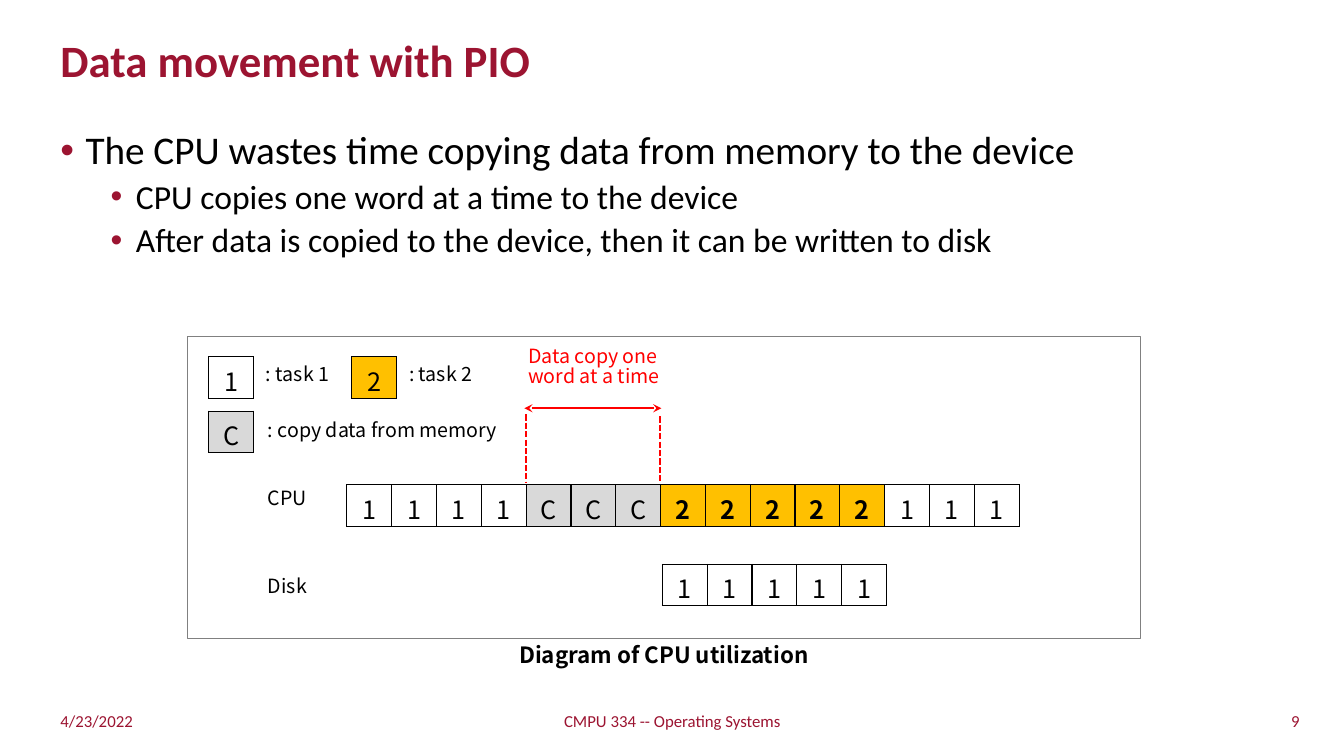
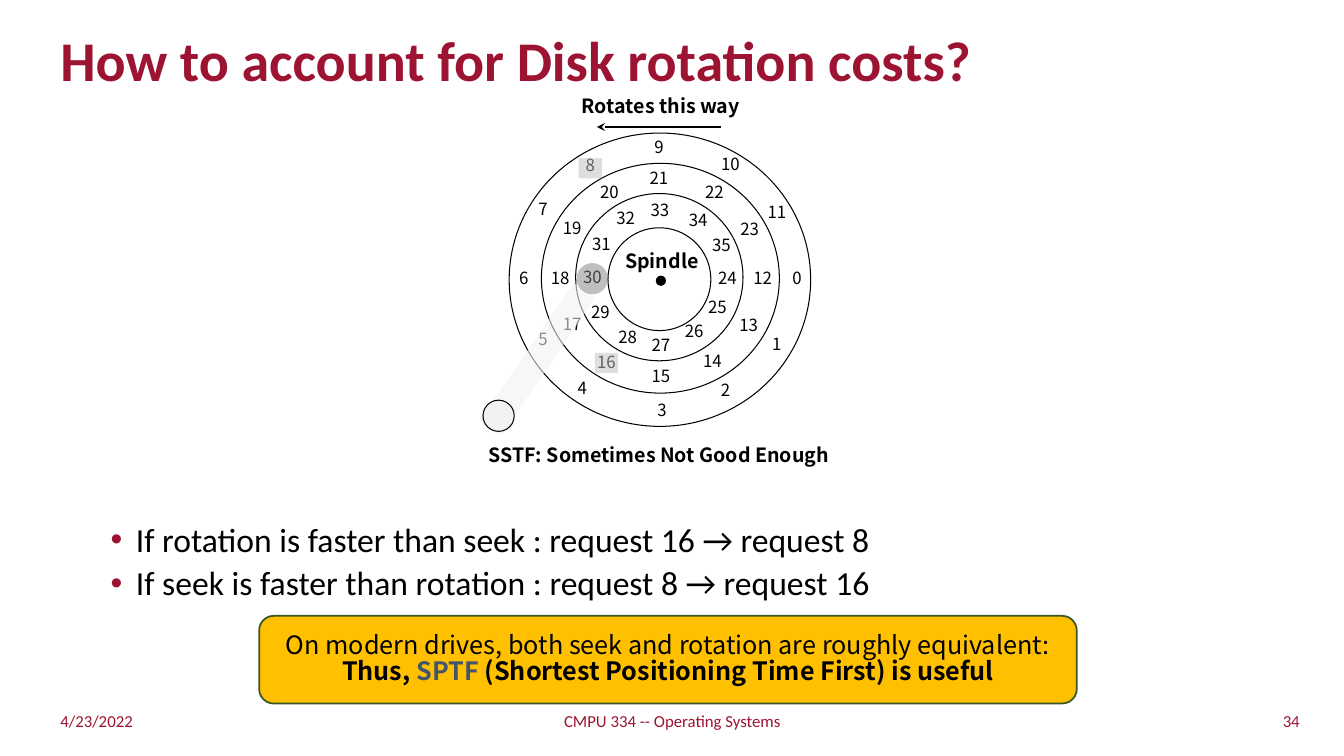
import lxml.etree
import pptx
import pptx.dml.color
import pptx.enum.dml
import pptx.enum.shapes
import pptx.enum.text
import pptx.oxml.ns
import pptx.util

PX = 9144
C = {
    "crimson": "9C1431", "black": "000000", "white": "FFFFFF", "red": "FF0000",
    "gold": "FFC000", "light": "D9D9D9", "silver": "BFBFBF", "gray": "808080",
    "pale": "F2F2F2", "green": "385723", "slate": "44546A",
}
SANS = "Noto Sans CJK KR"
TIGHT = 0.84
RGB = pptx.dml.color.RGBColor.from_string
Pt = pptx.util.Pt
qn = pptx.oxml.ns.qn
sub = lxml.etree.SubElement
KIND = pptx.enum.shapes.MSO_SHAPE
ALIGN = pptx.enum.text.PP_ALIGN
ANCHOR = pptx.enum.text.MSO_ANCHOR
DASH = pptx.enum.dml.MSO_LINE


def set_text(sp, text, size, color="black", font=SANS, bold=False, align=ALIGN.LEFT,
             anchor=ANCHOR.TOP, spacing=TIGHT, side=10):
    tf = sp.text_frame
    tf.word_wrap = True
    tf.vertical_anchor = anchor
    tf.margin_left = tf.margin_right = side * PX
    tf.margin_top = tf.margin_bottom = 5 * PX
    tf.text = text
    for p in tf.paragraphs:
        p.alignment = align
        p.line_spacing = spacing
        for r in p.runs:
            r.font.name = font
            r.font.size = Pt(size)
            r.font.bold = bold
            r.font.color.rgb = RGB(C[color])
    return tf


def add_shape(s, kind, box, fill=None, line=None, width=0.75, alpha=None):
    sp = s.shapes.add_shape(kind, *[v * PX for v in box])
    sp.shadow.inherit = False
    if fill:
        sp.fill.solid()
        sp.fill.fore_color.rgb = RGB(C[fill])
        if alpha:
            clr = sp.fill._xPr.find(qn("a:solidFill"))[0]
            sub(clr, qn("a:alpha"), val=str(alpha * 1000))
    else:
        sp.fill.background()
    if line:
        sp.line.color.rgb = RGB(C[line])
        sp.line.width = Pt(width)
    else:
        sp.line.fill.background()
    return sp


prs = pptx.Presentation()
prs.slide_width = 1333 * PX
prs.slide_height = 750 * PX

pages = [
    ("Data movement with PIO", 32, "9", 125, [
        (0, "The CPU wastes time copying data from memory to the device"),
        (1, "CPU copies one word at a time to the device"),
        (1, "After data is copied to the device, then it can be written to disk"),
    ]),
    ("How to account for Disk rotation costs?", 40, "34", 514, [
        (1, "If rotation is faster than seek : request 16 → request 8"),
        (1, "If seek is faster than rotation : request 8 → request 16"),
    ]),
]
levels = [(28, 25, 10), (24, 75, 5)]

for title, title_size, number, body_top, bullets in pages:
    s = prs.slides.add_slide(prs.slide_layouts[6])
    sp = s.shapes.add_textbox(*[v * PX for v in (50, 25, 1145, 75)])
    set_text(sp, title, title_size, "crimson", "Calibri", True, anchor=ANCHOR.MIDDLE, spacing=0.9)

    sp = s.shapes.add_textbox(*[v * PX for v in (50, body_top, 1233, 670 - body_top)])
    tf = set_text(sp, "\n".join(text for level, text in bullets), 24, font="Calibri", spacing=0.9)
    for i, (p, (level, text)) in enumerate(zip(tf.paragraphs, bullets)):
        size, left, before = levels[level]
        pPr = p._p.get_or_add_pPr()
        pPr.set("marL", str(left * PX))
        pPr.set("indent", str(-25 * PX))
        sub(sub(pPr, qn("a:buClr")), qn("a:srgbClr"), val=C["crimson"])
        sub(pPr, qn("a:buFont"), typeface="Arial")
        sub(pPr, qn("a:buChar"), char="•")
        p.level = level
        p.space_before = Pt(before if i else 0)
        p.runs[0].font.size = Pt(size)

    for x, w, text, align in [
        (50, 376, "4/23/2022", ALIGN.LEFT),
        (442, 450, "CMPU 334 -- Operating Systems", ALIGN.CENTER),
        (923, 376, number, ALIGN.RIGHT),
    ]:
        sp = s.shapes.add_textbox(x * PX, 695 * PX, w * PX, 40 * PX)
        set_text(sp, text, 12, "crimson", "Calibri", align=align, anchor=ANCHOR.MIDDLE, spacing=1.0)

pio, disk = prs.slides

cell_fill = {"1": "white", "2": "gold", "C": "light"}
cell_w = 667 / 15
for x, y, tasks, bottom in [
    (344, 481, "1111CCC22222111", 5),
    (657, 560, "11111", 0),
    (207, 354, "1", 0),
    (349, 354, "2", 0),
    (207, 408, "C", 0),
]:
    width = round(cell_w * len(tasks) * PX)
    table = pio.shapes.add_table(1, len(tasks), x * PX, y * PX, width, 41 * PX).table
    table.first_row = table.horz_banding = False
    table.rows[0].height = 41 * PX
    for i, task in enumerate(tasks):
        table.columns[i].width = round(cell_w * PX)
        cell = table.cell(0, i)
        cell.margin_top = 5 * PX
        cell.margin_bottom = bottom * PX
        cell.text_frame.text = task
        p = cell.text_frame.paragraphs[0]
        p.alignment = ALIGN.CENTER
        r = p.runs[0]
        r.font.name = SANS
        r.font.size = Pt(18)
        r.font.bold = task == "2" and len(tasks) > 1
        r.font.color.rgb = RGB(C["black"])
        tcPr = cell._tc.get_or_add_tcPr()
        for side in ("a:lnL", "a:lnR", "a:lnT", "a:lnB"):
            ln = sub(tcPr, qn(side), w=str(Pt(1)))
            sub(sub(ln, qn("a:solidFill")), qn("a:srgbClr"), val=C["black"])
        cell.fill.solid()
        cell.fill.fore_color.rgb = RGB(C[cell_fill[task]])

for box, text, color in [
    ((256, 481, 80, 34), "CPU", "black"),
    ((256, 568, 80, 34), "Disk", "black"),
    ((514, 340, 180, 57), "Data copy one word at a time", "red"),
    ((254, 358, 134, 34), ": task 1", "black"),
    ((396, 358, 87, 34), ": task 2", "black"),
    ((256, 413, 266, 34), ": copy data from memory", "black"),
]:
    set_text(pio.shapes.add_textbox(*[v * PX for v in box]), text, 14, color)
add_shape(pio, KIND.RECTANGLE, (186, 334, 945, 299), line="gray")

for box in [(603, 226, 102, 102), (571, 192, 166, 166), (537, 162, 236, 228), (505, 132, 299, 291)]:
    add_shape(disk, KIND.OVAL, box, line="black")

sectors = [
    (771, 264), (751, 329), (700, 375), (637, 395), (558, 373), (519, 324),
    (500, 264), (519, 195), (566, 152), (634, 134), (705, 151), (751, 198),
    (737, 264), (723, 311), (687, 346), (636, 361), (582, 347), (548, 310),
    (536, 264), (548, 214), (585, 179), (634, 165), (689, 179), (724, 215),
    (702, 264), (692, 293), (669, 317), (636, 330), (603, 322), (576, 298),
    (568, 263), (577, 230), (601, 204), (635, 196), (673, 206), (696, 231),
]
for n, (x, y) in enumerate(sectors):
    sp = disk.shapes.add_textbox(x * PX, y * PX, 39 * PX, 30 * PX)
    set_text(sp, str(n), 12, align=ALIGN.CENTER, side=0)

add_shape(disk, KIND.OVAL, (651, 274, 9, 9), "black", "black")

for s, box, text, size in [
    (pio, (391, 635, 535, 37), "Diagram of CPU utilization", 16),
    (disk, (608, 246, 97, 34), "Spindle", 14),
    (disk, (557, 92, 197, 34), "Rotates this way", 14),
    (disk, (444, 438, 419, 34), "SSTF: Sometimes Not Good Enough", 14),
]:
    sp = s.shapes.add_textbox(*[v * PX for v in box])
    set_text(sp, text, size, bold=True, align=ALIGN.CENTER)

for s, ends, color, dash, arrows in [
    (pio, (522, 411, 522, 478), "red", DASH.SQUARE_DOT, []),
    (pio, (655, 413, 655, 479), "red", DASH.SQUARE_DOT, []),
    (pio, (520, 405, 656, 405), "red", None, ["a:headEnd", "a:tailEnd"]),
    (disk, (715, 126, 592, 126), "black", None, ["a:tailEnd"]),
]:
    sp = s.shapes.add_connector(pptx.enum.shapes.MSO_CONNECTOR.STRAIGHT, *[v * PX for v in ends])
    sp.line.color.rgb = RGB(C[color])
    sp.line.width = Pt(1.5)
    if dash:
        sp.line.dash_style = dash
    for arrow in arrows:
        sub(sp.line._get_or_add_ln(), qn(arrow), type="stealth")
    sub(sp._element.spPr, qn("a:effectLst"))

arm = add_shape(disk, KIND.ROUNDED_RECTANGLE, (520, 273, 26, 167), "pale", alpha=58)
arm.rotation = 34.4
add_shape(disk, KIND.OVAL, (572, 261, 31, 31), "gray", alpha=50)
add_shape(disk, KIND.OVAL, (479, 397, 31, 31), "pale", "black")
for x, y in [(590, 350), (574, 157)]:
    add_shape(disk, KIND.RECTANGLE, (x, y, 23, 20), "silver", alpha=50)

banner = add_shape(disk, KIND.ROUNDED_RECTANGLE, (257, 611, 811, 87), "gold", "green", 1.25)
tf = set_text(banner, "On modern drives, both seek and rotation are roughly equivalent:\nThus, ", 18,
              align=ALIGN.CENTER, anchor=ANCHOR.MIDDLE, side=12)
p = tf.paragraphs[1]
p.runs[0].font.bold = True
for text, color in [("SPTF", "slate"), (" (Shortest Positioning Time First) is useful", "black")]:
    r = p.add_run()
    r.text = text
    r.font.name = SANS
    r.font.size = Pt(18)
    r.font.bold = True
    r.font.color.rgb = RGB(C[color])

prs.save("out.pptx")
